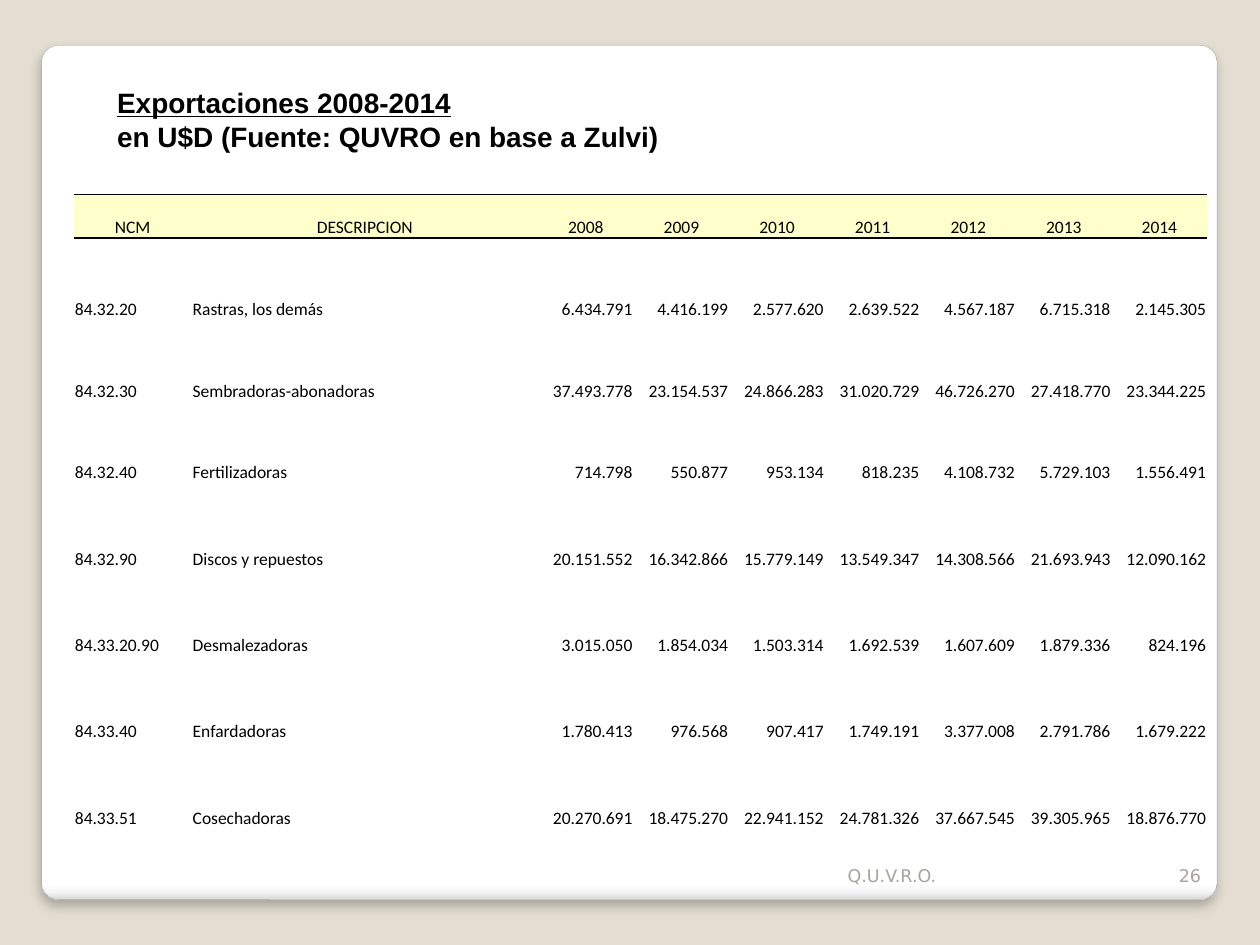
from dataclasses import dataclass

from lxml import etree
from pptx import Presentation
from pptx.dml.color import RGBColor
from pptx.enum.shapes import MSO_SHAPE
from pptx.enum.text import MSO_ANCHOR, MSO_AUTO_SIZE, PP_ALIGN
from pptx.oxml import parse_xml
from pptx.oxml.ns import qn
from pptx.util import Inches, Pt

LEFT, CENTER, RIGHT = PP_ALIGN.LEFT, PP_ALIGN.CENTER, PP_ALIGN.RIGHT
MIDDLE, BOTTOM = MSO_ANCHOR.MIDDLE, MSO_ANCHOR.BOTTOM
ROUNDED = MSO_SHAPE.ROUNDED_RECTANGLE
NO_AUTOFIT = MSO_AUTO_SIZE.NONE
DRAWING = 'xmlns:a="http://schemas.openxmlformats.org/drawingml/2006/main"'
PLAIN_TABLE = "{2D5ABB26-0587-4C30-8999-92F81FD0307C}"
GRID_COLUMNS, GRID_ROWS = 100, 75


@dataclass(frozen=True)
class Theme:
    backdrop: str = "E3DED1"
    paper: str = "FFFFFF"
    paper_edge: str = "A4A4A4"
    paper_fade: tuple = ((0, "FFFFFF"), (98, "FFFFFF"), (99, "F7F7F7"), (100, "DADADA"))
    ink: str = "000000"
    muted: str = "A8A49B"
    header: str = "FFFFCC"
    title_font: str = "Arial"
    table_font: str = "Calibri"
    footer_font: str = "DejaVu Sans"
    title_size: int = 16
    small_size: int = 10


def rgb(value):
    return RGBColor.from_string(value)


def write(paragraph, text, *, font, size, color, align=LEFT, bold=False, underline=False):
    paragraph.alignment = align
    run = paragraph.add_run()
    run.text = text
    run.font.name = font
    run.font.size = Pt(size)
    run.font.bold = bold
    run.font.underline = underline
    run.font.color.rgb = rgb(color)


class Deck:
    def __init__(self, theme):
        self.theme = theme
        self.presentation = Presentation()
        self.presentation.slide_width = Inches(10)
        self.presentation.slide_height = Inches(7.5)
        self.slide = self.presentation.slides.add_slide(self.presentation.slide_layouts[5])
        backdrop = self.slide.background.fill
        backdrop.solid()
        backdrop.fore_color.rgb = rgb(theme.backdrop)

    def across(self, columns):
        return round(self.presentation.slide_width * columns / GRID_COLUMNS)

    def down(self, rows):
        return round(self.presentation.slide_height * rows / GRID_ROWS)

    def area(self, left, top, width, height):
        return self.across(left), self.down(top), self.across(width), self.down(height)

    def card(self, *area):
        card = self.slide.shapes.add_shape(ROUNDED, *self.area(*area))
        card.adjustments[0] = 0.02
        card.line.color.rgb = rgb(self.theme.paper_edge)
        card.line.width = Pt(0.16)
        stops = "".join(
            f'<a:gs pos="{share * 1000}"><a:srgbClr val="{color}"/></a:gs>'
            for share, color in self.theme.paper_fade
        )
        properties = card._element.spPr
        properties.find(qn("a:prstGeom")).addnext(parse_xml(
            f'<a:gradFill {DRAWING}><a:gsLst>{stops}</a:gsLst>'
            '<a:lin ang="5400000" scaled="0"/></a:gradFill>'
        ))
        properties.append(parse_xml(
            f'<a:effectLst {DRAWING}><a:outerShdw blurRad="{Pt(6)}" dist="{Pt(4)}" '
            f'dir="5400000" rotWithShape="0"><a:srgbClr val="{self.theme.ink}">'
            '<a:alpha val="25000"/></a:srgbClr></a:outerShdw></a:effectLst>'
        ))
        self.slide.shapes._spTree.insert(2, card._element)

    def title(self, heading, subheading, *area):
        title = self.slide.shapes.title
        title.left, title.top, title.width, title.height = self.area(*area)
        frame = title.text_frame
        frame.auto_size = NO_AUTOFIT
        frame.word_wrap = True
        frame.vertical_anchor = MIDDLE
        style = dict(font=self.theme.title_font, size=self.theme.title_size,
                     color=self.theme.ink, bold=True)
        line = frame.paragraphs[0]
        write(line, heading, underline=True, **style)
        line.add_line_break()
        write(line, subheading, **style)

    def footer(self, text, *area, align=LEFT):
        frame = self.slide.shapes.add_textbox(*self.area(*area)).text_frame
        frame.word_wrap = True
        frame.vertical_anchor = BOTTOM
        write(frame.paragraphs[0], text, font=self.theme.footer_font,
              size=self.theme.small_size, color=self.theme.muted, align=align)

    def cell(self, cell, text, align, fill, ruled):
        cell.margin_left = cell.margin_right = cell.margin_top = Inches(0.01)
        cell.margin_bottom = 0
        cell.vertical_anchor = BOTTOM
        cell.fill.solid()
        cell.fill.fore_color.rgb = rgb(fill)
        if text:
            write(cell.text_frame.paragraphs[0], text, font=self.theme.table_font,
                  size=self.theme.small_size, color=self.theme.ink, align=align)
        if ruled:
            for position, side in enumerate(("lnT", "lnB")):
                cell._tc.tcPr.insert(position, parse_xml(
                    f'<a:{side} {DRAWING} w="{Pt(1)}"><a:solidFill>'
                    f'<a:srgbClr val="{self.theme.ink}"/></a:solidFill></a:{side}>'
                ))

    def table(self, rows, widths, heights, left, top):
        area = self.area(left, top, sum(widths), sum(heights))
        table = self.slide.shapes.add_table(len(rows), len(widths), *area).table
        table.first_row = table.horz_banding = False
        properties = table._tbl.tblPr
        style = properties.find(qn("a:tableStyleId"))
        if style is None:
            style = etree.SubElement(properties, qn("a:tableStyleId"))
        style.text = PLAIN_TABLE
        for column, width in zip(table.columns, widths):
            column.width = self.across(width)
        for number, (row, height, values) in enumerate(zip(table.rows, heights, rows)):
            row.height = self.down(height)
            heading = number == 0
            fill = self.theme.header if heading else self.theme.paper
            for column, (cell, value) in enumerate(zip(row.cells, values)):
                align = CENTER if heading else LEFT if column < 2 else RIGHT
                self.cell(cell, value, align, fill, heading)


YEARS = [str(year) for year in range(2008, 2015)]
HEADINGS = ["NCM", "DESCRIPCION", *YEARS]
EXPORTS = [
    ("84.32.20", "Rastras, los demás",
     "6.434.791 4.416.199 2.577.620 2.639.522 4.567.187 6.715.318 2.145.305"),
    ("84.32.30", "Sembradoras-abonadoras",
     "37.493.778 23.154.537 24.866.283 31.020.729 46.726.270 27.418.770 23.344.225"),
    ("84.32.40", "Fertilizadoras",
     "714.798 550.877 953.134 818.235 4.108.732 5.729.103 1.556.491"),
    ("84.32.90", "Discos y repuestos",
     "20.151.552 16.342.866 15.779.149 13.549.347 14.308.566 21.693.943 12.090.162"),
    ("84.33.20.90", "Desmalezadoras",
     "3.015.050 1.854.034 1.503.314 1.692.539 1.607.609 1.879.336 824.196"),
    ("84.33.40", "Enfardadoras",
     "1.780.413 976.568 907.417 1.749.191 3.377.008 2.791.786 1.679.222"),
    ("84.33.51", "Cosechadoras",
     "20.270.691 18.475.270 22.941.152 24.781.326 37.667.545 39.305.965 18.876.770"),
]


def main():
    rows, heights = [HEADINGS], [3.45]
    for number, (code, description, amounts) in enumerate(EXPORTS):
        rows += [[""] * len(HEADINGS), [code, description, *amounts.split()]]
        heights += [3.25, 3.25 if number < 3 else 3.6]
    widths = [9.35, 27.5] + [7.59] * len(YEARS)

    deck = Deck(Theme())
    deck.card(3.3, 3.6, 93.3, 67.8)
    deck.footer("Q.U.V.R.O.", 66.3, 66.8, 25, 4)
    deck.footer("26", 91.3, 66.8, 5, 4, align=RIGHT)
    deck.title("Exportaciones 2008-2014", "en U$D (Fuente: QUVRO en base a Zulvi)",
               8.3, 5, 85, 8.9)
    deck.table(rows, widths, heights, 5.85, 15.45)
    deck.presentation.save("out.pptx")


if __name__ == "__main__":
    main()
